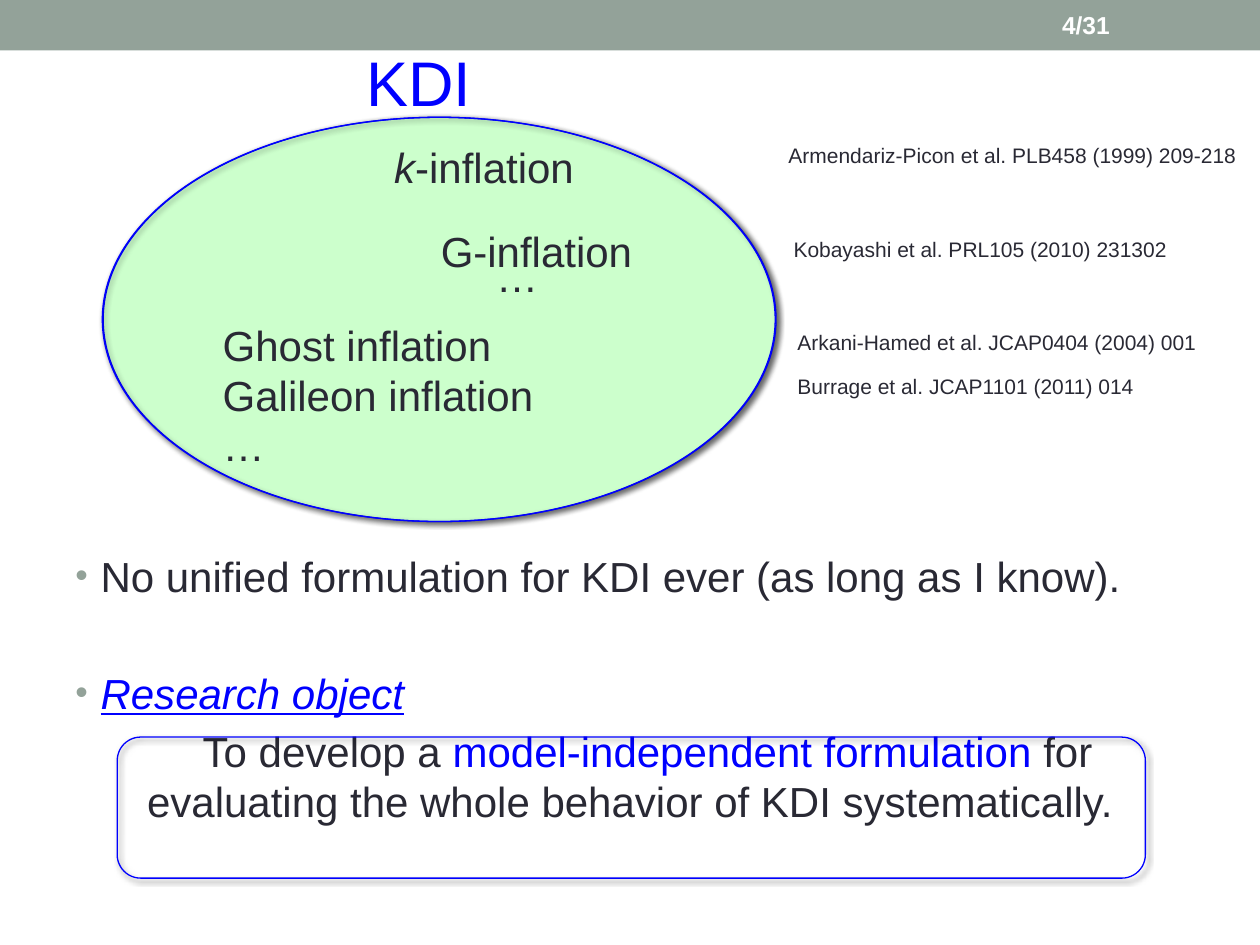
import dataclasses

import lxml.etree
import pptx
import pptx.dml.color
import pptx.enum.shapes
import pptx.enum.text
import pptx.oxml.ns
import pptx.util

Pt = pptx.util.Pt
Shape = pptx.enum.shapes.MSO_SHAPE
Align = pptx.enum.text.PP_ALIGN
Anchor = pptx.enum.text.MSO_ANCHOR


def rgb(value):
    return pptx.dml.color.RGBColor.from_string(value)


@dataclasses.dataclass(frozen=True)
class Theme:
    font: str = "Arial"
    band: str = "93A299"
    ink: str = "292934"
    accent: str = "0000FF"
    mint: str = "CCFFCC"
    white: str = "FFFFFF"
    shadow: str = "000000"
    heading: int = 36
    body: int = 24
    page: int = 14
    citation: int = 12
    leading: float = 1.19


class Deck:
    def __init__(self, theme):
        self.theme = theme
        self.presentation = pptx.Presentation()
        self.presentation.slide_width = Pt(720)
        self.presentation.slide_height = Pt(540)
        self.slide = self.presentation.slides.add_slide(self.presentation.slide_layouts[6])

    def child(self, parent, tag, **attributes):
        element = lxml.etree.SubElement(parent, pptx.oxml.ns.qn(tag))
        for name, value in attributes.items():
            element.set(name, str(value))
        return element

    def panel(self, preset, box, fill=None, line=None):
        panel = self.slide.shapes.add_shape(preset, *map(Pt, box))
        panel.shadow.inherit = False
        if fill:
            panel.fill.solid()
            panel.fill.fore_color.rgb = rgb(fill)
        else:
            panel.fill.background()
        if line:
            panel.line.color.rgb = rgb(line)
            panel.line.width = Pt(0.75)
        else:
            panel.line.fill.background()
        return panel

    def shadowed(self, preset, box, fill=None):
        panel = self.panel(preset, box, fill, self.theme.accent)
        effects = panel._element.spPr.find(pptx.oxml.ns.qn("a:effectLst"))
        shadow = self.child(effects, "a:outerShdw", blurRad=Pt(3), dist=Pt(2),
                            dir=45 * 60000, algn="ctr", rotWithShape=0)
        color = self.child(shadow, "a:srgbClr", val=self.theme.shadow)
        self.child(color, "a:alpha", val=60000)

    def frame(self, box, wrap=True):
        frame = self.slide.shapes.add_textbox(*map(Pt, box)).text_frame
        frame.word_wrap = wrap
        return frame

    def paragraph(self, frame, runs, size, color, index=0):
        paragraph = frame.add_paragraph() if index else frame.paragraphs[0]
        paragraph.line_spacing = Pt(round(size * self.theme.leading, 1))
        paragraph.font.name = self.theme.font
        paragraph.font.size = Pt(size)
        paragraph.font.color.rgb = rgb(color)
        for words, *run_color in runs:
            run = paragraph.add_run()
            run.text = words
            if run_color:
                run.font.color.rgb = rgb(run_color[0])
        return paragraph

    def label(self, box, *lines, size=None, color=None, wrap=True):
        frame = self.frame(box, wrap)
        for index, words in enumerate(lines):
            self.paragraph(frame, [(words,)], size or self.theme.body,
                           color or self.theme.ink, index)
        return frame

    def bullet(self, paragraph):
        properties = paragraph._p.get_or_add_pPr()
        properties.set("marL", str(Pt(14.4)))
        properties.set("indent", str(Pt(-14.4)))
        color = pptx.oxml.ns.qn("a:defRPr")
        defaults = properties.find(color)
        marks = [self.child(properties, "a:buClr")]
        self.child(marks[0], "a:srgbClr", val=self.theme.band)
        marks.append(self.child(properties, "a:buSzPct", val=85000))
        marks.append(self.child(properties, "a:buFont", typeface=self.theme.font))
        marks.append(self.child(properties, "a:buChar", char="•"))
        for mark in marks:
            defaults.addprevious(mark)

    def save(self):
        self.presentation.save("out.pptx")


def main():
    theme = Theme()
    deck = Deck(theme)
    deck.panel(Shape.RECTANGLE, (0, 0, 720, 28.8), theme.band)

    summary = deck.frame((36, 311.2, 648, 198.4))
    finding = deck.paragraph(
        summary, [("No unified formulation for KDI ever (as long as I know).",)],
        theme.body, theme.ink)
    deck.bullet(finding)
    research = deck.paragraph(summary, [("Research object",)], theme.body, theme.accent, 1)
    research.space_before = Pt(38.2)
    research.font.italic = True
    research.font.underline = True
    deck.bullet(research)
    aim = deck.paragraph(
        summary,
        [("To develop a ",), ("model-independent formulation", theme.accent),
         (" for evaluating the whole behavior of KDI systematically.",)],
        theme.body, theme.ink, 2)
    aim.space_before = Pt(4.8)
    aim.alignment = Align.CENTER
    aim._p.get_or_add_pPr().set("indent", str(Pt(20)))

    deck.shadowed(Shape.OVAL, (59, 67, 384.5, 231), theme.mint)
    deck.label((202.3, 21.6, 123, 51), "KDI", size=theme.heading, color=theme.accent)

    k_inflation = deck.frame((218.2, 77.8, 119.5, 36), wrap=False)
    name = deck.paragraph(k_inflation, [("k",), ("-inflation",)], theme.body, theme.ink)
    name.runs[0].font.italic = True
    deck.label((244.8, 125.3, 125.3, 36), "G-inflation", wrap=False)
    deck.label((276.5, 139.7, 38.9, 36), "…", wrap=False)
    deck.label((120.2, 179.3, 193.7, 94.3),
               "Ghost inflation", "Galileon inflation", "…", wrap=False)

    deck.shadowed(Shape.ROUNDED_RECTANGLE, (67, 421.2, 587.5, 80.6))
    deck.shadowed(Shape.OVAL, (58.5, 67, 384.5, 231))

    page = deck.label((599.8, 1.4, 84.2, 26), "4/31", size=theme.page, color=theme.white)
    page.vertical_anchor = Anchor.MIDDLE
    page.paragraphs[0].font.bold = True

    citations = [
        (443.5, 77.8, "Armendariz-Picon et al. PLB458 (1999) 209-218"),
        (446.4, 131.8, "Kobayashi et al. PRL105 (2010) 231302"),
        (448.6, 185, "Arkani-Hamed et al. JCAP0404 (2004) 001"),
        (448.6, 210.2, "Burrage et al. JCAP1101 (2011) 014"),
    ]
    for left, top, citation in citations:
        deck.label((left, top, 276.5, 21.6), citation, size=theme.citation)

    deck.save()


if __name__ == "__main__":
    main()
